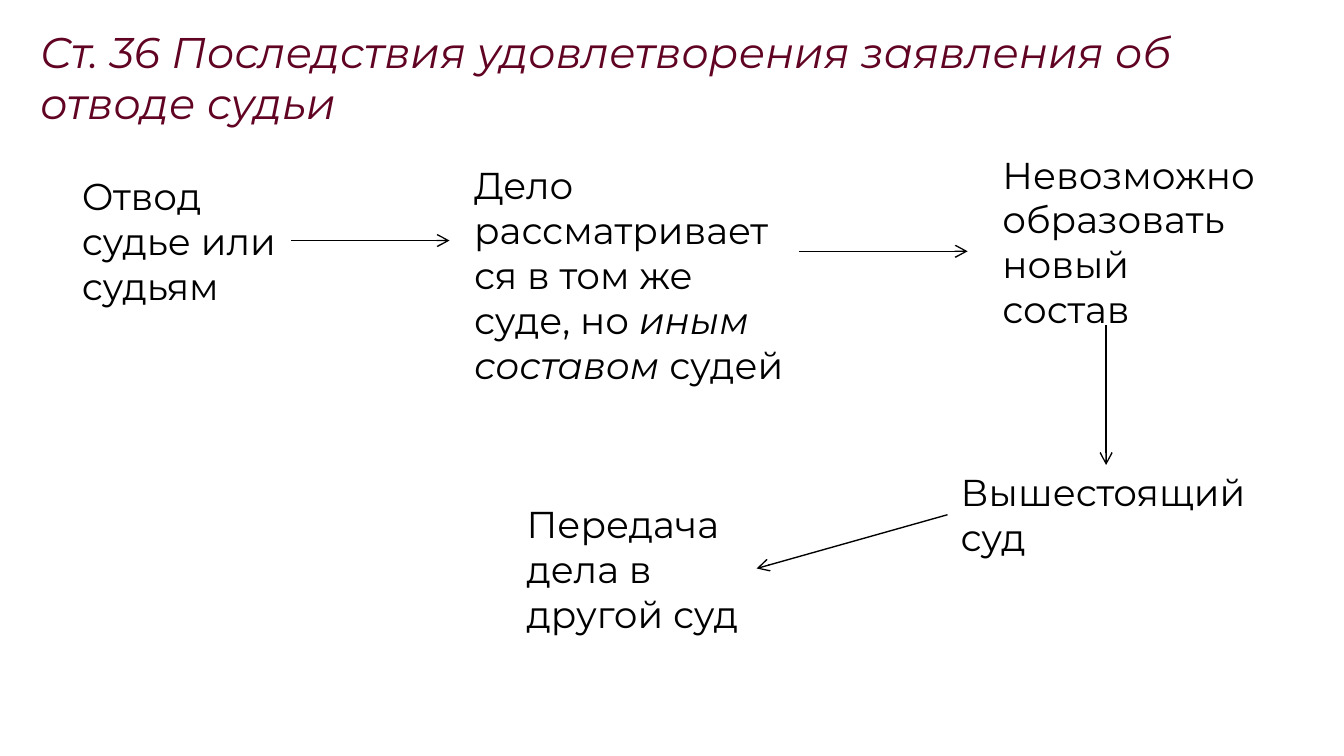
from lxml.etree import SubElement
from pptx import Presentation
from pptx.dml.color import RGBColor as Rgb
from pptx.enum.shapes import MSO_CONNECTOR as Link
from pptx.enum.text import MSO_AUTO_SIZE as Fit
from pptx.oxml.ns import qn
from pptx.util import Emu, Pt

PX = 4572  # 200 px to the inch
COLORS = {"title": "610323", "ink": "000000"}


def px(*vals):
    return [Emu(val * PX) for val in vals]


class Sheet:
    font = "Montserrat"
    size = 20
    line = 0.75

    def __init__(self, slide):
        self.slide = slide

    def text(self, box, *parts, size=size, color="ink"):
        """Each part is a pair of words and an italic flag."""
        frame = self.slide.shapes.add_textbox(*px(*box)).text_frame
        frame.word_wrap = True
        frame.auto_size = Fit.SHAPE_TO_FIT_TEXT
        para = frame.paragraphs[0]
        for words, slant in parts:
            run = para.add_run()
            run.text = words
            font = run.font
            font.name, font.size, font.italic = self.font, Pt(size), slant
            font.color.rgb = Rgb.from_string(COLORS[color])

    def arrow(self, start, end):
        link = self.slide.shapes.add_connector(
            Link.STRAIGHT, *px(*start, *end))
        link.line.width = Pt(self.line)
        link.line.color.rgb = Rgb.from_string(COLORS["ink"])
        props = link.element.spPr
        SubElement(props.find(qn("a:ln")), qn("a:tailEnd"), type="arrow")
        SubElement(props, qn("a:effectLst"))


def main():
    deck = Presentation()
    deck.slide_width, deck.slide_height = px(2000, 1125)
    sheet = Sheet(deck.slides.add_slide(deck.slide_layouts[6]))

    # Title
    sheet.text((40, 28, 1922, 176),
               ("Ст. 36 Последствия удовлетворения заявления об отводе судьи",
                True), size=23, color="title")

    # Steps
    sheet.text((102, 248, 330, 222), ("Отвод судье или судьям", False))
    sheet.text((686, 232, 504, 356),
               ("Дело рассматривается в том же суде, но ", False),
               ("иным составом ", True), ("судей", False))
    sheet.text((1472, 216, 426, 290),
               ("Невозможно образовать новый состав", False))
    sheet.text((1410, 688, 488, 154), ("Вышестоящий суд", False))
    sheet.text((764, 736, 362, 222), ("Передача дела в другой суд", False))

    # Arrows between steps
    sheet.arrow((433, 358), (669, 358))
    sheet.arrow((1189, 374), (1440, 374))
    sheet.arrow((1646, 484), (1646, 692))
    sheet.arrow((1410, 766), (1126, 846))

    deck.save("out.pptx")


if __name__ == "__main__":
    main()
